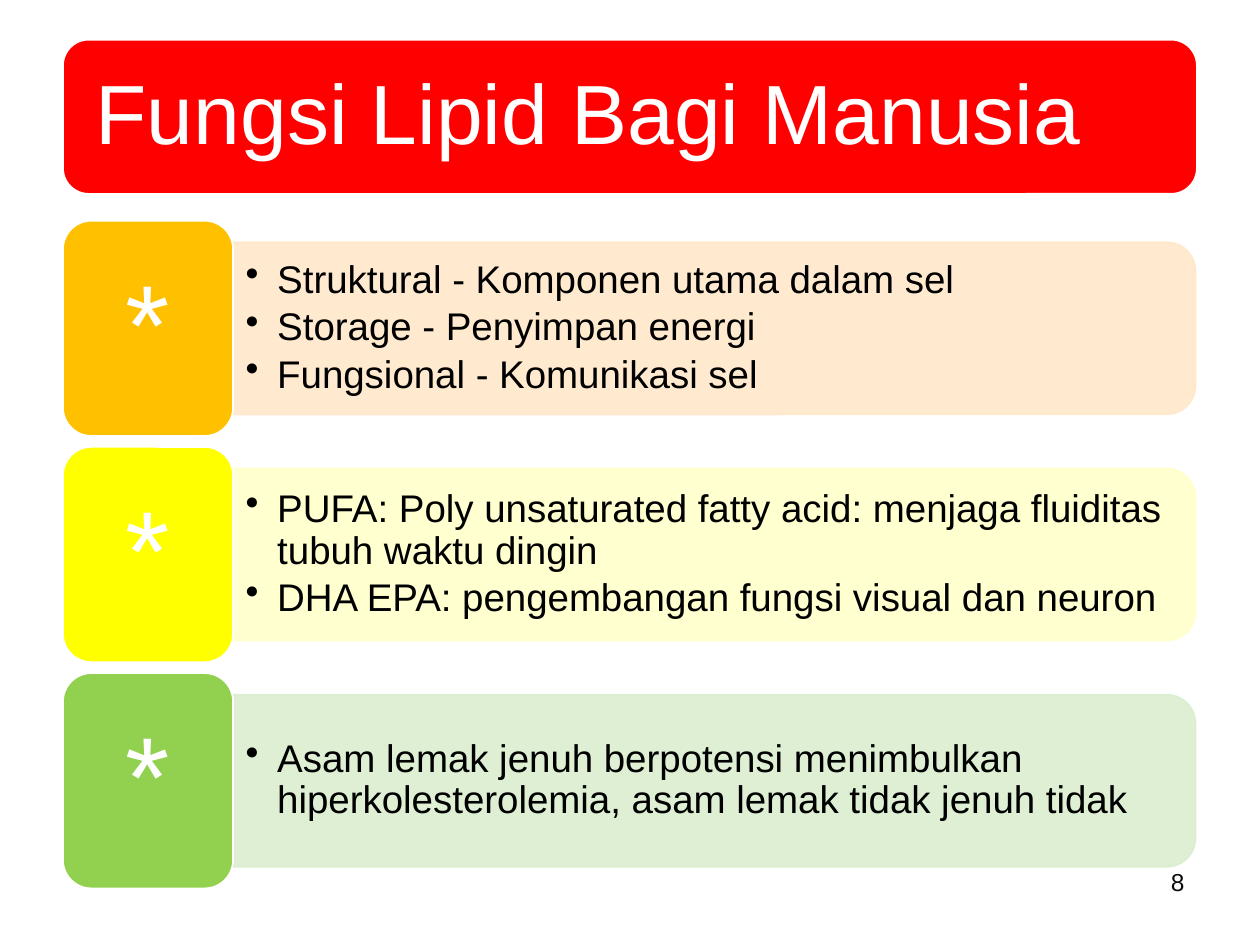
import pptx
import pptx.util
import pptx.dml.color
import pptx.enum.shapes
import pptx.enum.text
import pptx.oxml.ns
from lxml import etree

Cm, Pt = pptx.util.Cm, pptx.util.Pt
Kind = pptx.enum.shapes.MSO_SHAPE
Align = pptx.enum.text.PP_ALIGN
Anchor = pptx.enum.text.MSO_ANCHOR
qn = pptx.oxml.ns.qn

LEFT, TOP, PITCH = 1.27, 4.45, 4.56
TILE_W, TILE_H = 3.43, 4.34
PANEL_W, PANEL_H = 19.4, 3.47
ROWS = [
    ("FFC000", "FFE8CB", ["Struktural - Komponen utama dalam sel",
                          "Storage - Penyimpan energi",
                          "Fungsional - Komunikasi sel"]),
    ("FFFF00", "FFFFCB", ["PUFA: Poly unsaturated fatty acid: menjaga fluiditas tubuh waktu dingin",
                          "DHA EPA: pengembangan fungsi visual dan neuron"]),
    ("92D050", "DBEECF", ["Asam lemak jenuh berpotensi menimbulkan hiperkolesterolemia, "
                          "asam lemak tidak jenuh tidak"]),
]


def rgb(code):
    return pptx.dml.color.RGBColor.from_string(code)


def fade(fill):
    """Make a solid fill 89 percent opaque."""
    tone = fill._xPr.find(qn("a:solidFill"))[0]
    etree.SubElement(tone, qn("a:alpha"), val="89000")


def write(shape, lines, size, color, align=Align.LEFT, anchor=Anchor.MIDDLE,
          pad=(0.25, 0.13), space=0.9, after=0, bullet=False):
    frame = shape.text_frame
    frame.word_wrap = True
    frame.auto_size = pptx.enum.text.MSO_AUTO_SIZE.NONE
    frame.vertical_anchor = anchor
    frame.margin_left = frame.margin_right = Cm(pad[0])
    frame.margin_top = frame.margin_bottom = Cm(pad[1])
    for i, line in enumerate(lines):
        para = frame.paragraphs[0] if i == 0 else frame.add_paragraph()
        para.text = line
        para.alignment = align
        para.line_spacing = space
        para.space_before, para.space_after = Pt(0), Pt(after)
        if bullet:
            para.level = 1
            props = para._p.get_or_add_pPr()
            props.set("marL", str(Cm(0.64)))
            props.set("indent", str(-Cm(0.64)))
            etree.SubElement(props, qn("a:buChar"), char="•")
        font = para.font
        font.name, font.size = "Arial", Pt(size)
        font.color.rgb = rgb(color)


class Deck:
    def __init__(self):
        self.show = pptx.Presentation()
        self.show.slide_width, self.show.slide_height = Cm(25.4), Cm(19.05)
        self.slide = self.show.slides.add_slide(self.show.slide_layouts[5])
        self.shapes = self.slide.shapes

    def block(self, x, y, w, h, fill, kind=Kind.ROUNDED_RECTANGLE, line="FFFFFF"):
        shape = self.shapes.add_shape(kind, Cm(x), Cm(y), Cm(w), Cm(h))
        shape.shadow.inherit = False
        shape.fill.solid()
        shape.fill.fore_color.rgb = rgb(fill)
        shape.line.color.rgb = rgb(line)
        shape.line.width = Pt(1)
        shape.adjustments[0] = 0.167
        return shape

    def panel(self, x, y, w, h, fill):
        """Draw a bar rounded on its right side, as a turned tab."""
        tab = self.block(x + (w - h) / 2, y + (h - w) / 2, h, w, fill,
                         Kind.ROUND_2_SAME_RECTANGLE, fill)
        tab.rotation = 90
        fade(tab.fill)
        fade(tab.line.fill)

    def label(self, x, y, w, h, lines, **style):
        box = self.shapes.add_textbox(Cm(x), Cm(y), Cm(w), Cm(h))
        write(box, lines, **style)

    def title(self, text):
        self.block(LEFT, 0.8, 22.86, 3.11, "FF0000")
        head = self.shapes.title
        head.left, head.top = Cm(1.42), Cm(0.95)
        head.width, head.height = Cm(22.56), Cm(2.81)
        write(head, [text], 48, "FFFFFF", pad=(0.51, 0.51), after=16.8)
        self.shapes._spTree.append(head._element)  # in front of the bar

    def row(self, y, tint, pale, lines):
        x = LEFT + TILE_W
        self.panel(x, y + (TILE_H - PANEL_H) / 2, PANEL_W, PANEL_H, pale)
        self.label(x, y + 0.61, 19.25, 3.12, lines, size=22, color="000000",
                   after=3.3, bullet=True)
        tile = self.block(LEFT, y, TILE_W, TILE_H, tint)
        write(tile, ["*"], 65, "FFFFFF", Align.CENTER, pad=(0.86, 0.53), after=22.75)


def main():
    deck = Deck()
    deck.title("Fungsi Lipid Bagi Manusia")
    for i, row in enumerate(ROWS):
        deck.row(TOP + i * PITCH, *row)
    deck.label(18.2, 17.35, 5.93, 1.32, ["8"], size=14, color="0C0C0C",
               align=Align.RIGHT, anchor=Anchor.TOP, space=1)
    deck.show.save("out.pptx")


if __name__ == "__main__":
    main()
